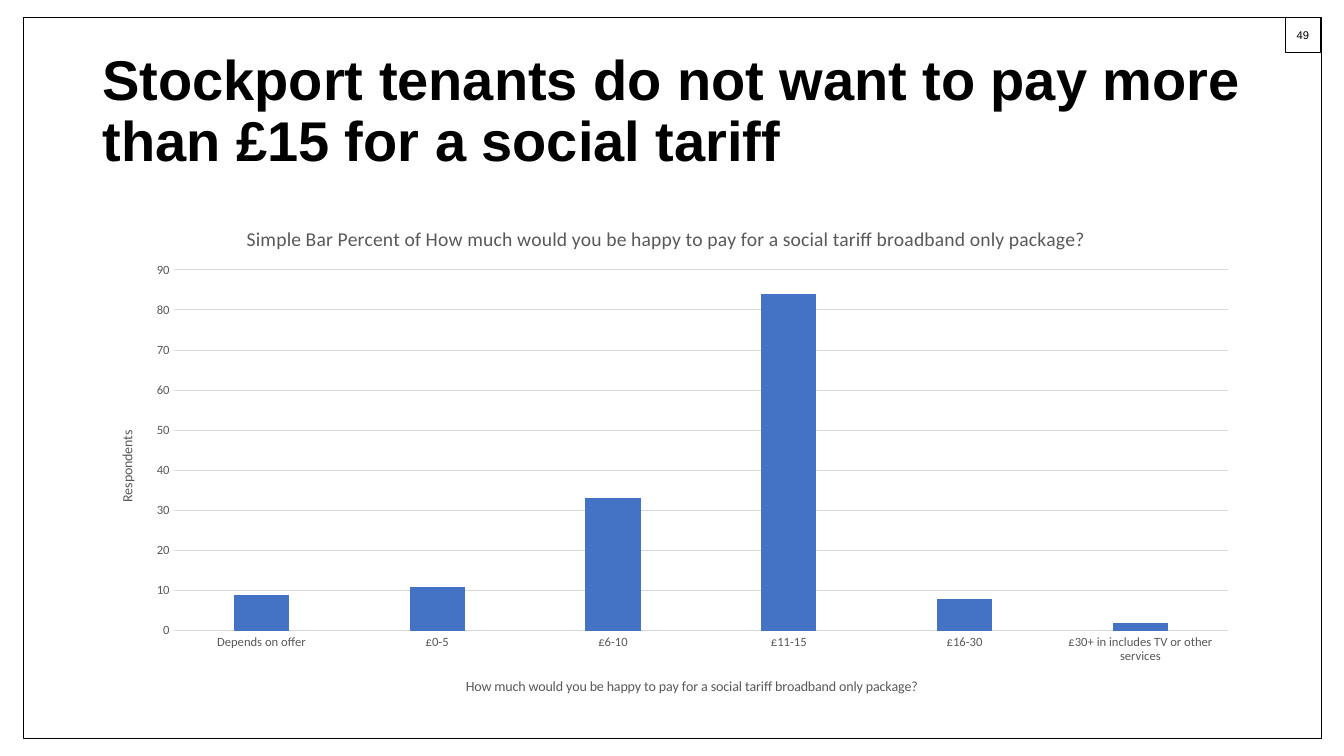
from lxml import etree
from pptx import Presentation
from pptx.chart.data import CategoryChartData
from pptx.dml.color import RGBColor
from pptx.enum.chart import XL_CHART_TYPE, XL_TICK_MARK
from pptx.enum.shapes import MSO_SHAPE
from pptx.enum.text import MSO_ANCHOR, MSO_AUTO_SIZE, PP_ALIGN
from pptx.oxml.ns import qn
from pptx.util import Cm, Pt

COLUMNS = XL_CHART_TYPE.COLUMN_CLUSTERED
NO_TICKS = XL_TICK_MARK.NONE
RECTANGLE = MSO_SHAPE.RECTANGLE
MIDDLE = MSO_ANCHOR.MIDDLE
NO_AUTOFIT = MSO_AUTO_SIZE.NONE
LEFT, CENTER = PP_ALIGN.LEFT, PP_ALIGN.CENTER

BLACK = RGBColor(0x00, 0x00, 0x00)
GREY_TEXT = RGBColor(0x59, 0x59, 0x59)
GREY_LINE = RGBColor(0xD9, 0xD9, 0xD9)
BLUE = RGBColor(0x44, 0x72, 0xC4)

QUESTION = ("How much would you be happy to pay for a social tariff "
            "broadband only package?")
RESPONDENTS = {
    "Depends on offer": 9,
    "£0-5": 11,
    "£6-10": 33,
    "£11-15": 84,
    "£16-30": 8,
    "£30+ in includes TV or other services": 2,
}


def set_format(target, values):
    for name, value in values.items():
        setattr(target, name, value)


def format_font(font, color, values):
    set_format(font, values)
    font.color.rgb = color


def add_outline(slide, left, top, width, height):
    outline = slide.shapes.add_shape(RECTANGLE, left, top, width, height)
    outline.shadow.inherit = False
    outline.fill.background()
    outline.line.color.rgb = BLACK
    outline.line.width = Pt(0.5)
    return outline


def add_page_number(slide, number):
    corner = add_outline(slide, Cm(32.39), Cm(0.43), Cm(0.89), Cm(0.89))
    set_format(corner.text_frame, {
        "margin_left": 0, "margin_right": 0, "margin_top": 0,
        "margin_bottom": 0, "vertical_anchor": MIDDLE})
    paragraph = corner.text_frame.paragraphs[0]
    paragraph.text = number
    paragraph.alignment = CENTER
    format_font(paragraph.font, BLACK, {"name": "Arial", "size": Pt(8)})


def fill_title(slide, wording):
    title = slide.shapes.title
    set_format(title, {"left": Cm(2.33), "top": Cm(1.01),
                       "width": Cm(29.21), "height": Cm(3.68)})
    set_format(title.text_frame, {"word_wrap": True, "auto_size": NO_AUTOFIT,
                                  "vertical_anchor": MIDDLE})
    paragraph = title.text_frame.paragraphs[0]
    paragraph.text = wording
    set_format(paragraph, {"alignment": LEFT, "line_spacing": 0.9})
    format_font(paragraph.font, BLACK,
                {"name": "Arial", "size": Pt(40), "bold": True})


def place_chart_part(part, index, **fractions):
    """Fix a chart part at fractions of the chart's width and height."""
    for old_layout in part.findall(qn("c:layout")):
        part.remove(old_layout)
    layout = etree.Element(qn("c:layout"))
    manual = etree.SubElement(layout, qn("c:manualLayout"))
    if "w" in fractions:
        etree.SubElement(manual, qn("c:layoutTarget"), val="inner")
    for mode in ("xMode", "yMode"):
        etree.SubElement(manual, qn(f"c:{mode}"), val="edge")
    for name, fraction in fractions.items():
        etree.SubElement(manual, qn(f"c:{name}"), val=str(fraction))
    part.insert(index, layout)


def write_chart_heading(heading, wording, size, x, y):
    paragraph = heading.text_frame.paragraphs[0]
    paragraph.text = wording
    format_font(paragraph.font, GREY_TEXT,
                {"name": "Calibri", "size": Pt(size), "bold": False})
    place_chart_part(heading.element, 1, x=x, y=y)


def format_axis(axis):
    set_format(axis, {"major_tick_mark": NO_TICKS,
                      "minor_tick_mark": NO_TICKS})
    format_font(axis.tick_labels.font, GREY_TEXT,
                {"name": "Calibri", "size": Pt(9)})


def format_line(line):
    line.color.rgb = GREY_LINE
    line.width = Pt(0.75)


def add_tariff_chart(slide):
    answers = CategoryChartData()
    answers.categories = list(RESPONDENTS)
    answers.add_series("Series 1", list(RESPONDENTS.values()))
    chart = slide.shapes.add_chart(COLUMNS, Cm(2.33), Cm(5.08), Cm(29.21),
                                   Cm(12.95), answers).chart
    chart.has_legend = False
    format_font(chart.font, BLACK, {"name": "Calibri", "size": Pt(10)})

    # Columns
    columns = chart.plots[0]
    set_format(columns, {"gap_width": 219, "overlap": -27,
                         "vary_by_categories": False})
    column_fill = columns.series[0].format.fill
    column_fill.solid()
    column_fill.fore_color.rgb = BLUE

    # Axes and gridlines
    prices, counts = chart.category_axis, chart.value_axis
    for axis in (prices, counts):
        format_axis(axis)
    format_line(prices.format.line)
    counts.format.line.fill.background()
    set_format(counts, {"minimum_scale": 0, "maximum_scale": 90,
                        "major_unit": 10, "has_major_gridlines": True})
    format_line(counts.major_gridlines.format.line)

    # Headings and plot area
    write_chart_heading(chart.chart_title,
                        f"Simple Bar Percent of {QUESTION}", 14, 0.13, 0.04)
    write_chart_heading(prices.axis_title, QUESTION, 10, 0.32, 0.92)
    write_chart_heading(counts.axis_title, "Respondents", 10, 0.02, 0.44)
    plot_area = chart.element.find(f".//{qn('c:plotArea')}")
    place_chart_part(plot_area, 0, x=0.07, y=0.133, w=0.91, h=0.702)


def main():
    deck = Presentation()
    set_format(deck, {"slide_width": Cm(33.87), "slide_height": Cm(19.05)})
    slide = deck.slides.add_slide(deck.slide_layouts[5])

    # Frame and page number
    add_page_number(slide, "49")
    add_outline(slide, Cm(0.58), Cm(0.43), Cm(32.72), Cm(18.19))

    # Content
    fill_title(slide, "Stockport tenants do not want to pay more "
                      "than £15 for a social tariff")
    add_tariff_chart(slide)
    deck.save("out.pptx")


if __name__ == "__main__":
    main()
